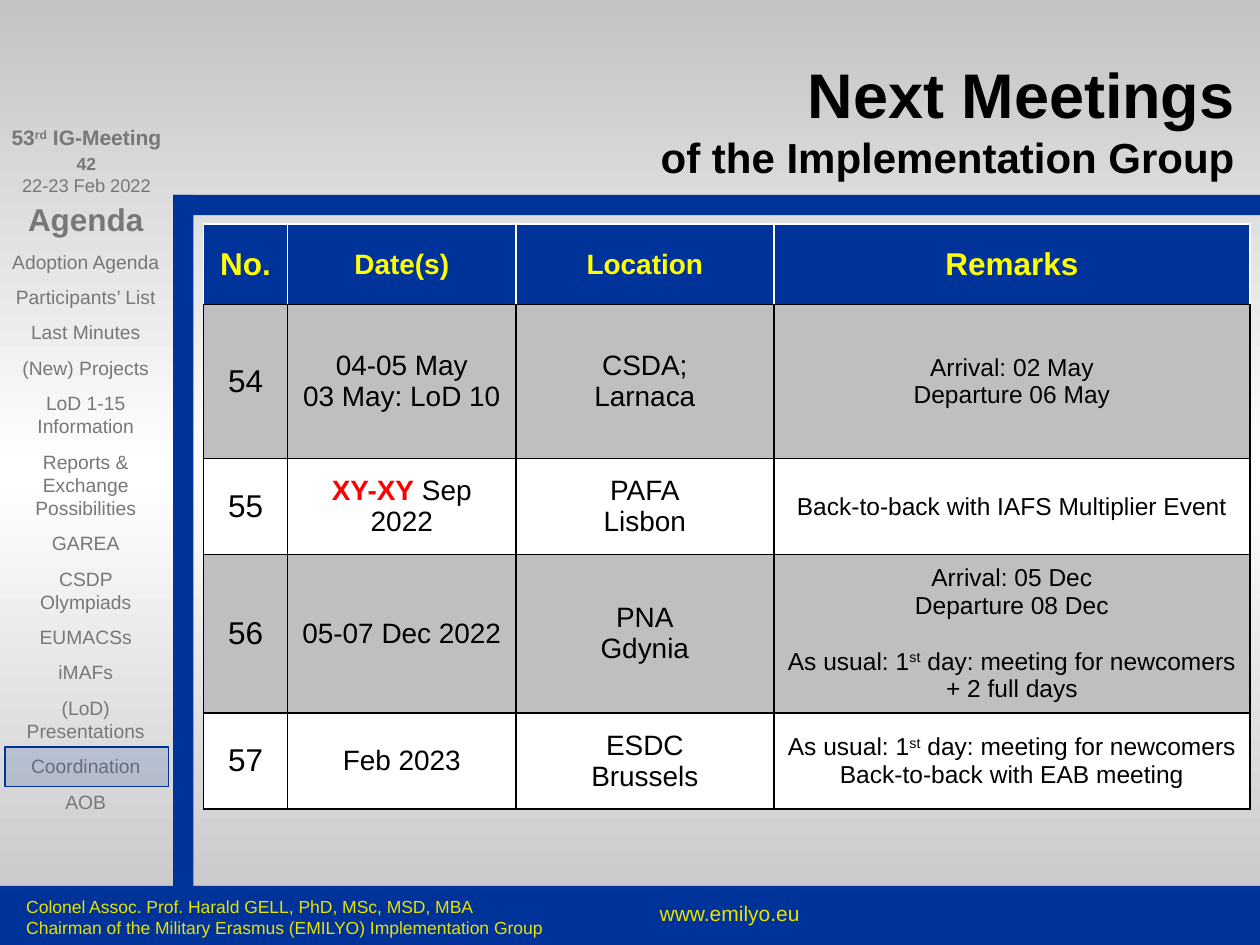
from copy import deepcopy

from lxml.etree import SubElement
from pptx import Presentation
from pptx.dml.color import RGBColor
from pptx.enum.shapes import MSO_SHAPE as Shape
from pptx.enum.text import MSO_ANCHOR as Anchor, PP_ALIGN as Align
from pptx.oxml.ns import qn
from pptx.util import Cm, Pt

BLUE = RGBColor(0x00, 0x33, 0x99)
GREY_TEXT = RGBColor(0x77, 0x77, 0x77)
FOOTER_YELLOW = RGBColor(0xE7, 0xE2, 0x00)
HEADER_YELLOW = RGBColor(0xFF, 0xFF, 0x00)
RED = RGBColor(0xFF, 0x00, 0x00)
BLACK = RGBColor(0x00, 0x00, 0x00)
WHITE = RGBColor(0xFF, 0xFF, 0xFF)
ROW_GREY = RGBColor(0xBF, 0xBF, 0xBF)
BACKGROUND_GREY = RGBColor(0xC3, 0xC3, 0xC3)

# A line is a string or a list of (text, format) runs.
SUPERSCRIPT = {"baseline": 30000}
FIRST_DAY = [("As usual: 1", {}), ("st", SUPERSCRIPT)]

AGENDA = [
    "Adoption Agenda", "Participants’ List", "Last Minutes", "(New) Projects",
    "LoD 1-15 Information", "Reports & Exchange Possibilities", "GAREA",
    "CSDP Olympiads", "EUMACSs", "iMAFs", "(LoD) Presentations",
    "Coordination", "AOB",
]
TITLE = [
    [("Next Meetings", {"size": Pt(36)})],
    [("of the Implementation Group", {"size": Pt(24)})],
]
MEETING = [[("53", {}), ("rd", SUPERSCRIPT), (" IG-Meeting", {})]]
MEETING_DATE = [("22-23 Feb 2022", {"size": Pt(10.5), "bold": False})]
CHAIRMAN = [
    "Colonel Assoc. Prof. Harald GELL, PhD, MSc, MSD, MBA",
    "Chairman of the Military Erasmus (EMILYO) Implementation Group",
]

HEADERS = ["No.", "Date(s)", "Location", "Remarks"]
HEADER_SIZES = [18, 16, 16, 18]
BODY_SIZES = [18, 16, 16, 14]
MEETINGS = [
    (["54"], ["04-05 May", "03 May: LoD 10"], ["CSDA;", "Larnaca"],
     ["Arrival: 02 May", "Departure 06 May"]),
    (["55"], [[("XY-XY", {"color": RED, "bold": True}), (" Sep 2022", {})]],
     ["PAFA", "Lisbon"], ["Back-to-back with IAFS Multiplier Event"]),
    (["56"], ["05-07 Dec 2022"], ["PNA", "Gdynia"],
     ["Arrival: 05 Dec", "Departure 08 Dec",
      FIRST_DAY + [(" day: meeting for newcomers + 2 full days", {})]]),
    (["57"], ["Feb 2023"], ["ESDC", "Brussels"],
     [FIRST_DAY + [(" day: meeting for newcomers", {})],
      "Back-to-back with EAB meeting"]),
]
COLUMN_WIDTHS = [1.7, 4.6, 5.2, 9.6]
ROW_HEIGHTS = [1.62, 3.1, 1.94, 3.02, 1.94]


def format_run(run, values):
    for name, value in values.items():
        if name == "color":
            run.font.color.rgb = value
        elif name == "baseline":
            run._r.get_or_add_rPr().set("baseline", str(value))
        else:
            setattr(run.font, name, value)


def write_lines(frame, lines, align, size, color, bold=False, space_after=0):
    base = {"name": "Arial", "size": Pt(size), "color": color, "bold": bold}
    for index, line in enumerate(lines):
        paragraph = frame.add_paragraph() if index else frame.paragraphs[0]
        paragraph.alignment = align
        paragraph.space_after = Pt(space_after)
        for text, changes in [(line, {})] if isinstance(line, str) else line:
            run = paragraph.add_run()
            run.text = text
            format_run(run, {**base, **changes})


def add_text(slide, box, lines, align, size, color, margins=(0.25, 0.13),
             anchor=Anchor.TOP, wrap=True, **style):
    frame = slide.shapes.add_textbox(*map(Cm, box)).text_frame
    frame.word_wrap = wrap
    frame.vertical_anchor = anchor
    frame.margin_left = frame.margin_right = Cm(margins[0])
    frame.margin_top = frame.margin_bottom = Cm(margins[1])
    write_lines(frame, lines, align, size, color, **style)
    return frame


def add_bar(slide, *box):
    bar = slide.shapes.add_shape(Shape.RECTANGLE, *map(Cm, box))
    bar.shadow.inherit = False
    bar.fill.solid()
    bar.fill.fore_color.rgb = BLUE
    bar.line.fill.background()
    return bar


def set_background(slide):
    fill = slide.background.fill
    fill.gradient()
    fill.gradient_angle = 270
    stops = slide._element.find(".//" + qn("a:gsLst"))
    stops.insert(1, deepcopy(stops[0]))
    for stop, position, color in zip(
            fill.gradient_stops, (0, 0.5, 1),
            (BACKGROUND_GREY, WHITE, BACKGROUND_GREY)):
        stop.position = position
        stop.color.rgb = color


def set_borders(cell, colors):
    """Draw 1 pt borders in the order left, right, top, bottom."""
    properties = cell._tc.get_or_add_tcPr()
    for index, (side, color) in enumerate(zip("LRTB", colors)):
        line = SubElement(properties, qn(f"a:ln{side}"), w=str(Pt(1)))
        fill = SubElement(line, qn("a:solidFill"))
        SubElement(fill, qn("a:srgbClr"), val=str(color))
        properties.insert(index, line)


def fill_cell(cell, lines, size, text_color, fill_color, borders, bold=False):
    cell.fill.solid()
    cell.fill.fore_color.rgb = fill_color
    cell.vertical_anchor = Anchor.MIDDLE
    write_lines(cell.text_frame, lines, Align.CENTER, size, text_color, bold)
    set_borders(cell, borders)


def add_meetings_table(slide):
    table = slide.shapes.add_table(
        len(ROW_HEIGHTS), len(COLUMN_WIDTHS), Cm(4.1), Cm(4.52),
        Cm(sum(COLUMN_WIDTHS)), Cm(sum(ROW_HEIGHTS))).table
    for column, width in zip(table.columns, COLUMN_WIDTHS):
        column.width = Cm(width)
    for row, height in zip(table.rows, ROW_HEIGHTS):
        row.height = Cm(height)
    for column, (header, size) in enumerate(zip(HEADERS, HEADER_SIZES)):
        fill_cell(table.cell(0, column), [header], size, HEADER_YELLOW, BLUE,
                  [WHITE, WHITE, WHITE, BLACK], bold=True)
    for row, meeting in enumerate(MEETINGS, start=1):
        fill_color = ROW_GREY if row % 2 else WHITE
        for column, (lines, size) in enumerate(zip(meeting, BODY_SIZES)):
            fill_cell(table.cell(row, column), lines, size, BLACK, fill_color,
                      [BLACK] * 4)
    newcomers = table.cell(3, 3).text_frame.paragraphs[-1]
    newcomers.space_before = Pt(16)


def main():
    presentation = Presentation()
    presentation.slide_width, presentation.slide_height = Cm(25.4), Cm(19.05)
    slide = presentation.slides.add_slide(presentation.slide_layouts[6])
    set_background(slide)

    add_bar(slide, 3.49, 3.93, 0.41, 14.25)
    add_bar(slide, 3.49, 3.93, 21.91, 0.41)
    add_bar(slide, 0, 17.86, 25.4, 1.19)

    add_text(slide, (1.12, 2.95, 1.24, 0.69), ["42"], Align.CENTER, 10,
             GREY_TEXT, wrap=False, bold=True)
    agenda = [[("Agenda", {"size": Pt(18), "bold": True})]] + AGENDA
    add_text(slide, (0.13, 3.93, 3.2, 13.8), agenda, Align.CENTER, 11,
             GREY_TEXT, margins=(0.1, 0.1), space_after=7)
    meeting = add_text(slide, (0, 2.51, 3.49, 1.68), MEETING + [MEETING_DATE],
                       Align.CENTER, 12, GREY_TEXT, margins=(0, 0), bold=True)
    meeting.paragraphs[1].space_before = Pt(14)
    add_text(slide, (12.45, 18.03, 4.52, 0.89), ["www.emilyo.eu"],
             Align.CENTER, 12, FOOTER_YELLOW)
    add_text(slide, (0.28, 17.93, 11.13, 0.89), CHAIRMAN, Align.LEFT, 10,
             FOOTER_YELLOW)
    add_text(slide, (3.5, 0.48, 21.39, 3.18), TITLE, Align.RIGHT, 24, BLACK,
             margins=(0, 0), anchor=Anchor.BOTTOM, bold=True)

    add_meetings_table(slide)

    highlight = add_bar(slide, 0.1, 15.06, 3.3, 0.79)
    highlight.line.color.rgb = BLUE
    highlight.line.width = Pt(0.75)
    color = highlight._element.spPr.find(qn("a:solidFill"))[0]
    SubElement(color, qn("a:alpha"), val="16000")

    presentation.save("out.pptx")


if __name__ == "__main__":
    main()
